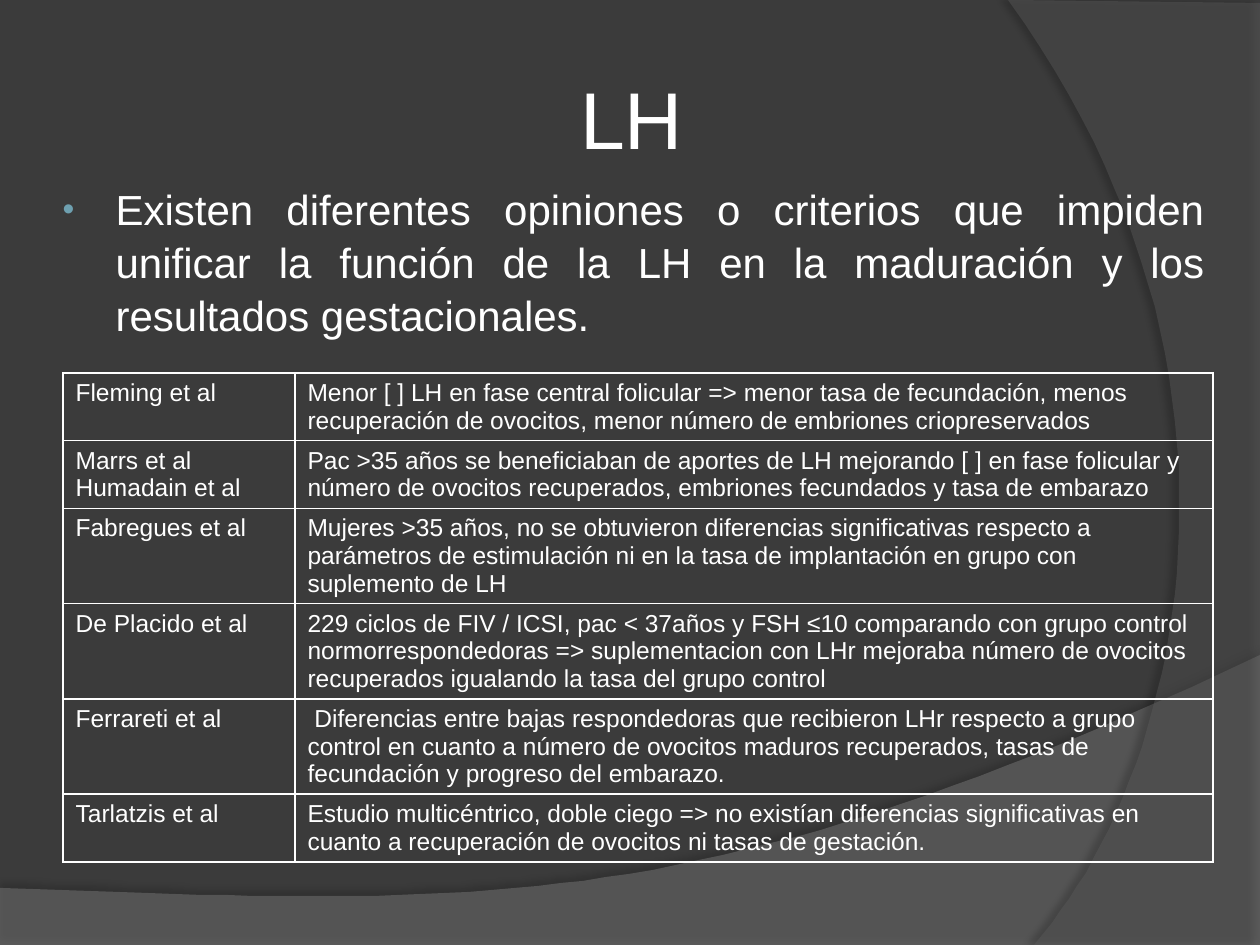
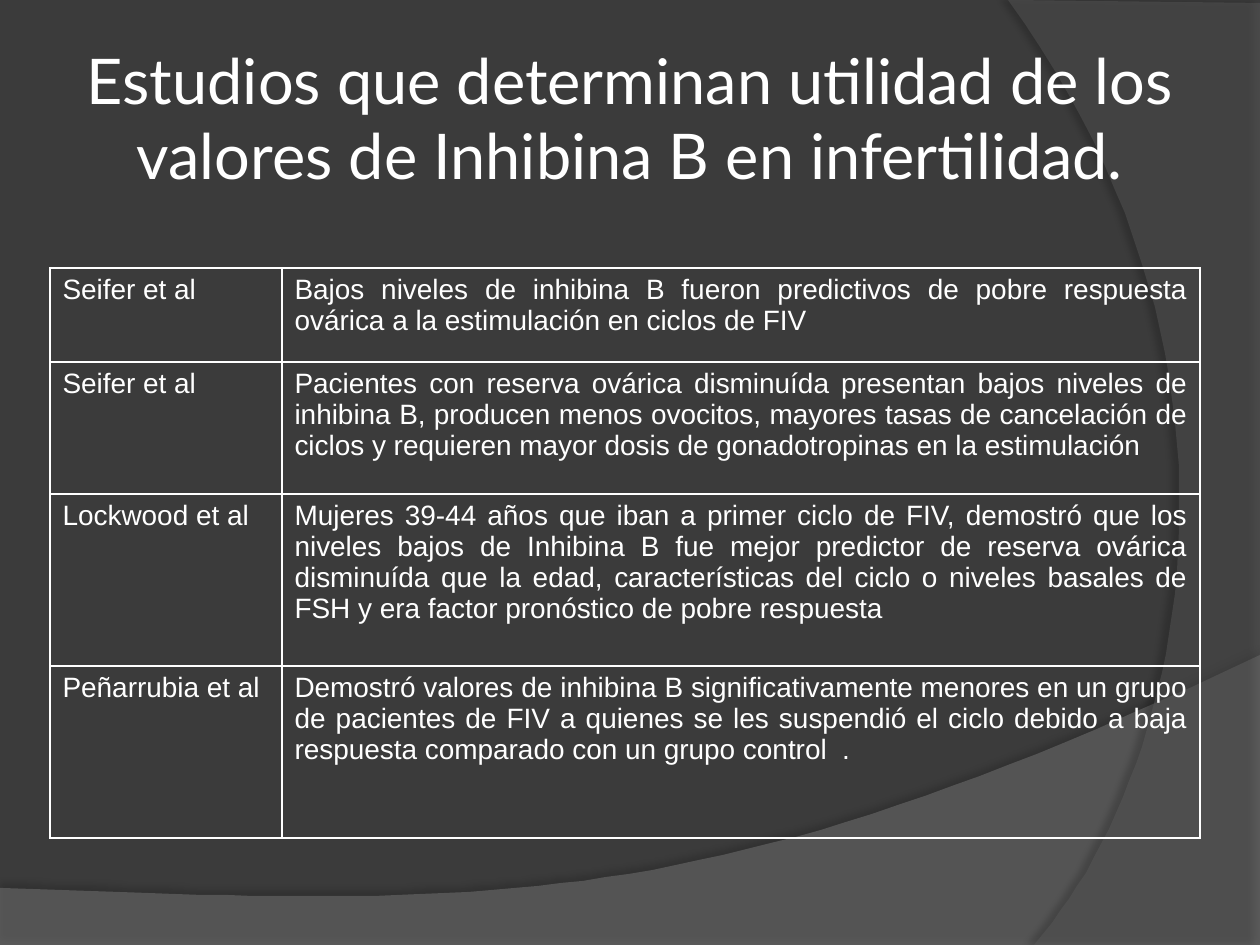
import lxml.etree
import pptx
import pptx.dml.color
import pptx.enum.text
import pptx.oxml.ns
import pptx.util

SCALE = 914400 / 126
WHITE, BACKGROUND, WAVE, ARC, BULLET = "FFFFFF", "3B3B3B", "7F7F7F", "5E5E5E", "6EA0B0"
BODY_FONT, TITLE_FONT = "Arial", "Lato"
ALIGN = pptx.enum.text.PP_ALIGN
COLUMNS = (232, 918)

LH_STUDIES = [
    ("Fleming et al",
     "Menor [ ] LH en fase central folicular => menor tasa de fecundación, menos recuperación "
     "de ovocitos, menor número de embriones criopreservados"),
    ("Marrs et al\nHumadain et al",
     "Pac >35 años se beneficiaban de aportes de LH mejorando [ ] en fase folicular y número "
     "de ovocitos recuperados, embriones fecundados y tasa de embarazo"),
    ("Fabregues et al",
     "Mujeres >35 años, no se obtuvieron diferencias significativas respecto a parámetros de "
     "estimulación ni en la tasa de implantación en grupo con suplemento de LH"),
    ("De Placido et al",
     "229 ciclos de FIV / ICSI, pac < 37años y FSH ≤10 comparando con grupo control "
     "normorrespondedoras => suplementacion con LHr mejoraba número de ovocitos recuperados "
     "igualando la tasa del grupo control"),
    ("Ferrareti et al",
     " Diferencias entre bajas respondedoras que recibieron LHr respecto a grupo control en "
     "cuanto a número de ovocitos maduros recuperados, tasas de fecundación y progreso del "
     "embarazo."),
    ("Tarlatzis et al",
     "Estudio multicéntrico, doble ciego => no existían diferencias significativas en cuanto "
     "a recuperación de ovocitos ni tasas de gestación."),
]

INHIBIN_STUDIES = [
    ("Seifer et al",
     "Bajos niveles de inhibina B fueron predictivos de pobre respuesta ovárica a la "
     "estimulación en ciclos de FIV"),
    ("Seifer et al",
     "Pacientes con reserva ovárica disminuída presentan bajos niveles de inhibina B, producen "
     "menos ovocitos, mayores tasas de cancelación de ciclos y requieren mayor dosis de "
     "gonadotropinas en la estimulación"),
    ("Lockwood et al",
     "Mujeres 39-44 años que iban a primer ciclo de FIV, demostró que los niveles bajos de "
     "Inhibina B fue mejor predictor de reserva ovárica disminuída que la edad, "
     "características del ciclo o niveles basales de FSH y era factor pronóstico de pobre "
     "respuesta"),
    ("Peñarrubia et al",
     "Demostró valores de inhibina B significativamente menores en un grupo de pacientes de "
     "FIV a quienes se les suspendió el ciclo debido a baja respuesta comparado con un grupo "
     "control  ."),
]


def px(length):
    return pptx.util.Emu(round(length * SCALE))


def color(hex_string):
    return pptx.dml.color.RGBColor.from_string(hex_string)


def add_xml(parent, tag, **attributes):
    return lxml.etree.SubElement(parent, pptx.oxml.ns.qn(tag), attributes)


def place(shape, box):
    shape.left, shape.top, shape.width, shape.height = map(px, box)


def format_text(text_frame, font, size, alignment):
    for paragraph in text_frame.paragraphs:
        paragraph.alignment = alignment
        for run in paragraph.runs:
            run.font.name = font
            run.font.size = pptx.util.Pt(size)
            run.font.color.rgb = color(WHITE)


def curve(start, control_a, control_b, end, steps=48):
    points = []
    for step in range(1, steps + 1):
        t = step / steps
        weights = ((1 - t) ** 3, 3 * t * (1 - t) ** 2, 3 * t * t * (1 - t), t ** 3)
        points.append(tuple(
            sum(weight * value for weight, value in zip(weights, axis))
            for axis in zip(start, control_a, control_b, end)))
    return points


def add_master_band(slide, master, position, points, fill, opacity, shadow):
    builder = slide.shapes.build_freeform(*points[0], scale=SCALE)
    builder.add_line_segments(points[1:], close=True)
    shape = builder.convert_to_shape()
    shape.fill.solid()
    shape.fill.fore_color.rgb = color(fill)
    fill_color = shape.element.spPr.find(".//" + pptx.oxml.ns.qn("a:srgbClr"))
    add_xml(fill_color, "a:alpha", val=str(opacity * 1000))
    shape.line.fill.background()
    shape.shadow.inherit = False
    shadow_opacity, blur, distance, angle = shadow
    effects = shape.element.spPr.find(pptx.oxml.ns.qn("a:effectLst"))
    outer = add_xml(effects, "a:outerShdw", blurRad=str(pptx.util.Pt(blur)),
                    dist=str(pptx.util.Pt(distance)), dir=str(angle * 60000),
                    algn="ctr", rotWithShape="0")
    add_xml(add_xml(outer, "a:srgbClr", val="000000"), "a:alpha",
            val=str(shadow_opacity * 1000))
    shape.element.nvSpPr.cNvPr.set("id", str(100 + position))
    master.element.cSld.spTree.insert(2 + position, shape.element)


def decorate_master(slide, master):
    master.background.fill.solid()
    master.background.fill.fore_color.rgb = color(BACKGROUND)
    wave = [(0, 888), (0, 946), (1260, 946), (1260, 655)]
    wave += curve(wave[-1], (704, 919), (493, 906), wave[0])
    arc = [(1260, 3), (1260, 945), (1034, 945)]
    arc += curve(arc[-1], (1178, 780), (1283, 378), (1008, 0))
    add_master_band(slide, master, 0, wave, WAVE, 45, (35, 4, 3.5, 270))
    add_master_band(slide, master, 1, arc, ARC, 40, (45, 4, 4, 180))


def fill_title(slide, box, text, font, size):
    title = slide.shapes.title
    place(title, box)
    frame = title.text_frame
    frame.text = text
    frame.word_wrap = True
    frame.auto_size = pptx.enum.text.MSO_AUTO_SIZE.NONE
    frame.vertical_anchor = pptx.enum.text.MSO_ANCHOR.MIDDLE
    frame.margin_left = frame.margin_right = px(6)
    frame.margin_top = frame.margin_bottom = px(6)
    format_text(frame, font, size, ALIGN.CENTER)


def fill_body(slide, box, text):
    body = slide.placeholders[1]
    place(body, box)
    frame = body.text_frame
    frame.text = text
    frame.auto_size = pptx.enum.text.MSO_AUTO_SIZE.NONE
    format_text(frame, BODY_FONT, 24, ALIGN.JUSTIFY)
    paragraph = frame.paragraphs[0]
    paragraph.space_before = pptx.util.Pt(5)
    paragraph.line_spacing = 1.05
    properties = paragraph._p.get_or_add_pPr()
    properties.set("marL", str(px(58)))
    properties.set("indent", str(px(-53)))
    add_xml(add_xml(properties, "a:buClr"), "a:srgbClr", val=BULLET)
    add_xml(properties, "a:buSzPct", val="80000")
    add_xml(properties, "a:buFont", typeface=BODY_FONT)
    add_xml(properties, "a:buChar", char="•")


def add_borders(cell):
    properties = cell._tc.get_or_add_tcPr()
    for position, side in enumerate(("a:lnL", "a:lnR", "a:lnT", "a:lnB")):
        line = add_xml(properties, side, w=str(pptx.util.Pt(1)))
        add_xml(add_xml(line, "a:solidFill"), "a:srgbClr", val=WHITE)
        properties.insert(position, line)


def add_studies_table(slide, left, top, row_heights, studies, size, alignment):
    frame = slide.shapes.add_table(len(studies), len(COLUMNS), px(left), px(top),
                                   px(sum(COLUMNS)), px(sum(row_heights)))
    table = frame.table
    table.first_row = table.horz_banding = False
    for column, width in zip(table.columns, COLUMNS):
        column.width = px(width)
    for row, height, study in zip(table.rows, row_heights, studies):
        row.height = px(height)
        for cell, text in zip(row.cells, study):
            cell.text_frame.text = text
            format_text(cell.text_frame, BODY_FONT, size, alignment)
            cell.fill.background()
            add_borders(cell)


def build_lh_slide(slide):
    fill_title(slide, (117, 38, 1029, 158), "LH", BODY_FONT, 46)
    fill_body(slide, (45, 175, 1172, 175),
              "Existen diferentes opiniones o criterios que impiden unificar la función de la LH "
              "en la maduración y los resultados gestacionales.")
    add_studies_table(slide, 63, 373, (67, 67, 95, 95, 95, 67), LH_STUDIES, 14, ALIGN.LEFT)


def build_inhibin_slide(slide):
    fill_title(slide, (63, 38, 1134, 158),
               "Estudios que determinan utilidad de los valores de Inhibina B en infertilidad.",
               TITLE_FONT, 36)
    add_studies_table(slide, 50, 268, (94, 132, 172, 172), INHIBIN_STUDIES, 16, ALIGN.JUSTIFY)


def main():
    presentation = pptx.Presentation()
    presentation.slide_width, presentation.slide_height = px(1260), px(945)
    layouts = presentation.slide_layouts
    lh_slide = presentation.slides.add_slide(layouts.get_by_name("Title and Content"))
    inhibin_slide = presentation.slides.add_slide(layouts.get_by_name("Title Only"))
    decorate_master(lh_slide, presentation.slide_master)
    build_lh_slide(lh_slide)
    build_inhibin_slide(inhibin_slide)
    presentation.save("out.pptx")


if __name__ == "__main__":
    main()
